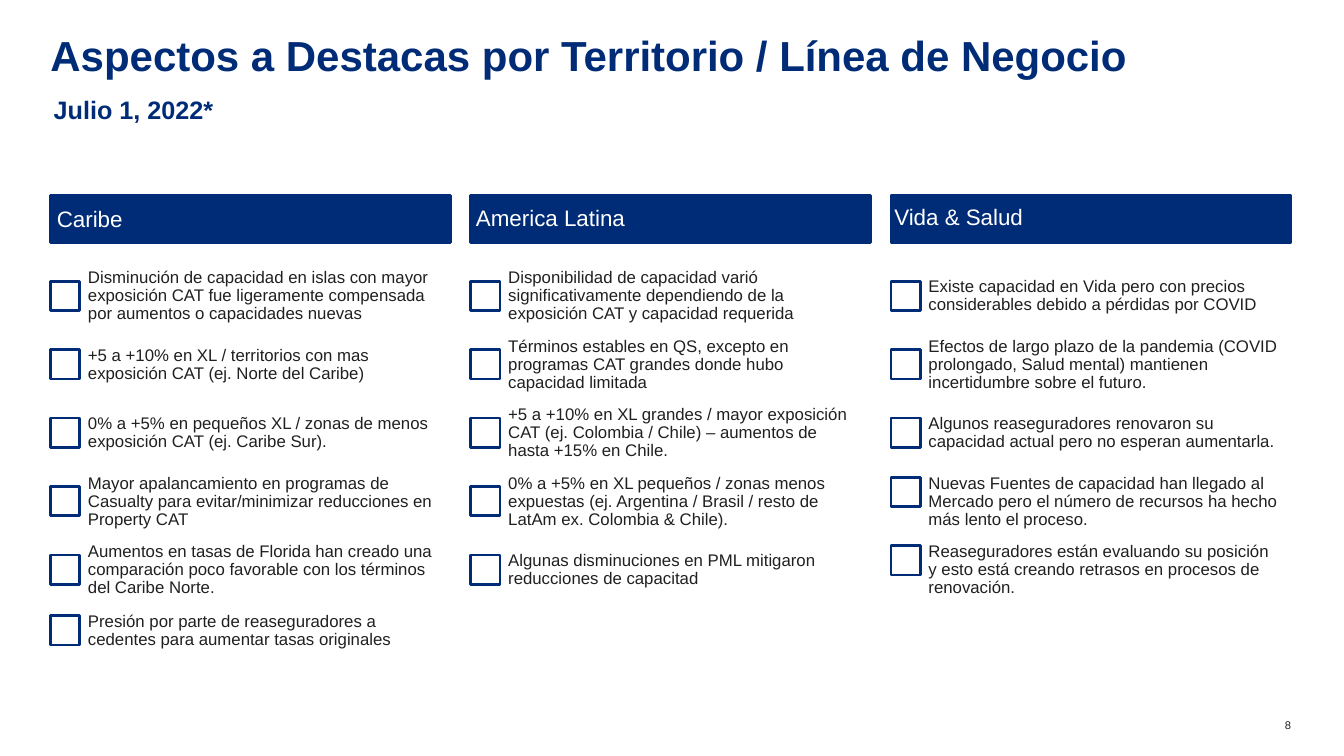
from dataclasses import dataclass

from pptx import Presentation
from pptx.dml.color import RGBColor
from pptx.enum.shapes import MSO_SHAPE
from pptx.enum.text import MSO_ANCHOR, PP_ALIGN
from pptx.util import Pt

# Content
TITLE = "Aspectos a Destacas por Territorio / Línea de Negocio"
SUBTITLE = "Julio 1, 2022*"
PAGE_NUMBER = "8"
TERRITORIES = [
    ("Caribe", [
        "Disminución de capacidad en islas con mayor exposición CAT fue ligeramente compensada por aumentos o capacidades nuevas",
        "+5 a +10% en XL / territorios con mas exposición CAT (ej. Norte del Caribe)",
        "0% a +5% en pequeños XL / zonas de menos exposición CAT (ej. Caribe Sur).",
        "Mayor apalancamiento en programas de Casualty para evitar/minimizar reducciones en Property CAT",
        "Aumentos en tasas de Florida han creado una comparación poco favorable con los términos del Caribe Norte.",
        "Presión por parte de reaseguradores a cedentes para aumentar tasas originales",
    ]),
    ("America Latina", [
        "Disponibilidad de capacidad varió significativamente dependiendo de la exposición CAT y capacidad requerida",
        "Términos estables en QS, excepto en programas CAT grandes donde hubo capacidad limitada",
        "+5 a +10% en XL grandes / mayor exposición CAT (ej. Colombia / Chile) – aumentos de hasta +15% en Chile.",
        "0% a +5% en XL pequeños / zonas menos expuestas (ej. Argentina / Brasil / resto de LatAm ex. Colombia & Chile).",
        "Algunas disminuciones en PML mitigaron reducciones de capacitad",
    ]),
    ("Vida & Salud", [
        "Existe capacidad en Vida pero con precios considerables debido a pérdidas por COVID",
        "Efectos de largo plazo de la pandemia (COVID prolongado, Salud mental) mantienen incertidumbre sobre el futuro.",
        "Algunos reaseguradores renovaron su capacidad actual pero no esperan aumentarla.",
        "Nuevas Fuentes de capacidad han llegado al Mercado pero el número de recursos ha hecho más lento el proceso.",
        "Reaseguradores están evaluando su posición y esto está creando retrasos en procesos de renovación.",
    ]),
]


@dataclass(frozen=True)
class Theme:
    font: str = "Arial"
    navy: RGBColor = RGBColor(0x00, 0x2C, 0x77)
    ink: RGBColor = RGBColor(0x20, 0x20, 0x20)
    white: RGBColor = RGBColor(0xFF, 0xFF, 0xFF)
    title: int = 30
    subtitle: int = 18
    heading: int = 16
    body: int = 12
    page: int = 8
    outline: int = 2


THEME = Theme()

# Layout, in points
MARGIN = 36
COLUMN_PITCH, COLUMN_WIDTH = 300.2, 285.8
BAR_TOP, BAR_HEIGHT = 139.7, 33.8
HEADING_HEIGHT = 60.5
HEADING_SHIFTS = [(2.2, 127.4), (1.4, 126.7), (0, 126)]  # x offset, top
ROW_TOP, ROW_PITCH, ROW_HEIGHT = 187.2, 48.9, 49
LAST_ROW_LIFT = 5.5  # the sixth row sits closer to the fifth
CHECKBOX_SIZE, CHECKBOX_DROP = 21, 13.6
RAISED_CHECKBOXES = {(2, 3), (2, 4)}  # column, row
CHECKBOX_RAISE = 6.6
TEXT_INDENT = 20

presentation = Presentation()
presentation.slide_width, presentation.slide_height = Pt(960), Pt(540)
slide = presentation.slides.add_slide(presentation.slide_layouts[6])


def add_text(text, left, top, width, height, size, color, bold=False,
             anchor=MSO_ANCHOR.TOP, align=PP_ALIGN.LEFT, spacing=1.0, insets=(0, 0)):
    frame = slide.shapes.add_textbox(Pt(left), Pt(top), Pt(width), Pt(height)).text_frame
    frame.word_wrap = True
    frame.vertical_anchor = anchor
    frame.margin_left = frame.margin_right = Pt(insets[0])
    frame.margin_top = frame.margin_bottom = Pt(insets[1])
    frame.text = text
    paragraph = frame.paragraphs[0]
    paragraph.alignment = align
    paragraph.line_spacing = spacing
    font = paragraph.runs[0].font
    font.name, font.size, font.bold = THEME.font, Pt(size), bold
    font.color.rgb = color


def add_box(left, top, width, height, fill):
    box = slide.shapes.add_shape(MSO_SHAPE.RECTANGLE, Pt(left), Pt(top), Pt(width), Pt(height))
    box.shadow.inherit = False
    box.fill.solid()
    box.fill.fore_color.rgb = fill
    box.line.color.rgb = THEME.navy
    box.line.width = Pt(THEME.outline)


# Title, subtitle and page number
add_text(TITLE, MARGIN, 28, 886.3, 39, THEME.title, THEME.navy, bold=True, spacing=0.8)
add_text(SUBTITLE, 38.4, 63.4, 883.4, 25.2, THEME.subtitle, THEME.navy, bold=True,
         anchor=MSO_ANCHOR.BOTTOM)
add_text(PAGE_NUMBER, 900, 513.2, 22.3, 9.4, THEME.page, THEME.ink, align=PP_ALIGN.RIGHT)

# One column per territory
for column, (territory, points) in enumerate(TERRITORIES):
    left = MARGIN + column * COLUMN_PITCH
    heading_shift, heading_top = HEADING_SHIFTS[column]
    add_box(left, BAR_TOP, COLUMN_WIDTH, BAR_HEIGHT, THEME.navy)
    add_text(territory, left + heading_shift, heading_top, COLUMN_WIDTH, HEADING_HEIGHT,
             THEME.heading, THEME.white, anchor=MSO_ANCHOR.MIDDLE, spacing=0.9, insets=(2.4, 1.6))

    # Checkbox and text for each point
    for row, point in enumerate(points):
        top = ROW_TOP + row * ROW_PITCH - (LAST_ROW_LIFT if row == 5 else 0)
        raise_by = CHECKBOX_RAISE if (column, row) in RAISED_CHECKBOXES else 0
        add_box(left, top + CHECKBOX_DROP - raise_by, CHECKBOX_SIZE, CHECKBOX_SIZE, THEME.white)
        add_text(point, left + TEXT_INDENT, top, COLUMN_WIDTH - TEXT_INDENT, ROW_HEIGHT,
                 THEME.body, THEME.ink, anchor=MSO_ANCHOR.MIDDLE, spacing=0.9, insets=(6.8, 6.8))

presentation.save("out.pptx")
